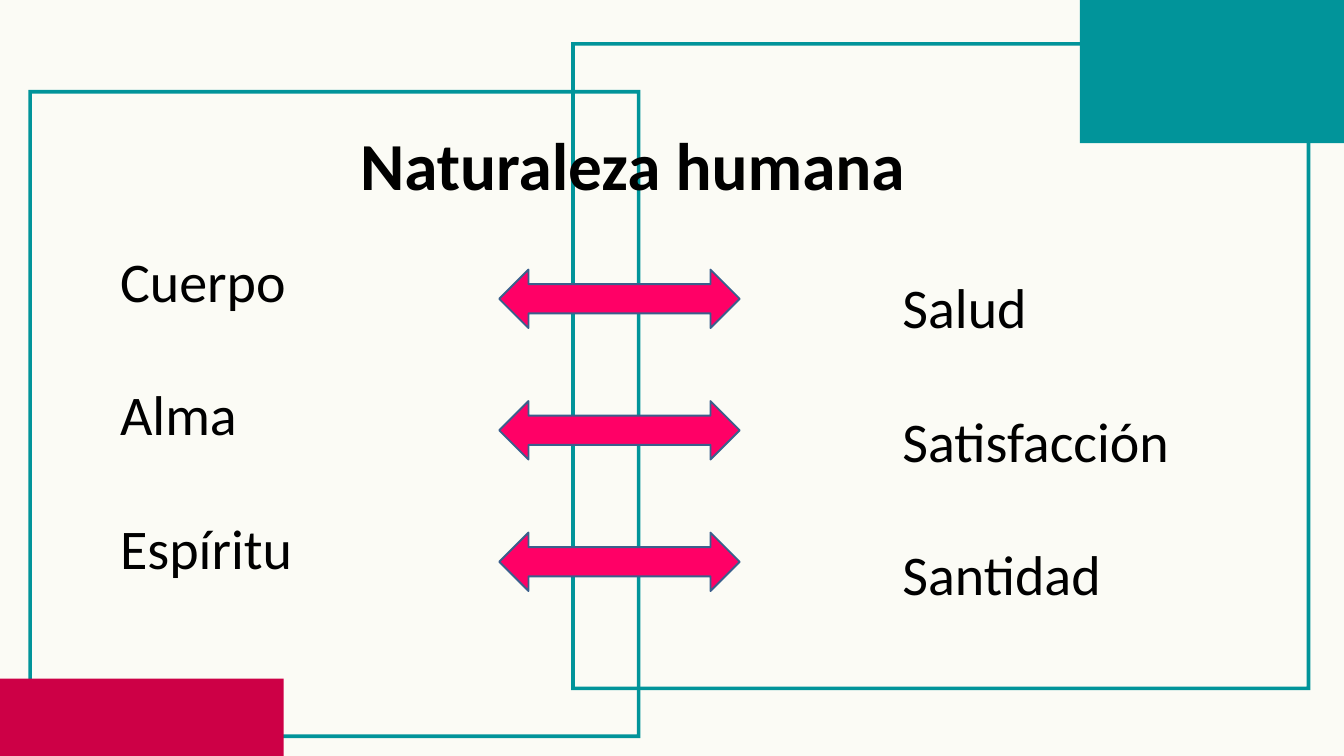
from dataclasses import dataclass

from pptx import Presentation
from pptx.dml.color import RGBColor
from pptx.enum.shapes import MSO_SHAPE as Shape
from pptx.enum.text import MSO_ANCHOR as Anchor, MSO_AUTO_SIZE as AutoSize, PP_ALIGN as Align
from pptx.util import Cm, Pt

COLORS = {
    "background": "FBFBF5",
    "teal": "01949A",
    "crimson": "CD0046",
    "pink": "FF0066",
    "outline": "3A5F8C",
    "text": "000000",
}
FONT = "Calibri"
FRAME_THICKNESS = 0.14
ARROW_TOP, ARROW_STEP = 10.19, 4.97


@dataclass
class Box:
    """A rectangle in centimetres."""
    left: float
    top: float
    width: float
    height: float

    def lengths(self) -> tuple:
        return Cm(self.left), Cm(self.top), Cm(self.width), Cm(self.height)


@dataclass
class WordColumn:
    box: Box
    words: list[str]


FRAMES = [Box(21.59, 1.59, 27.94, 24.5), Box(1.07, 3.4, 23.14, 24.5)]
BLOCKS = [
    (Box(-0.05, 25.65, 10.77, 2.92), "crimson"),
    (Box(40.82, 0, 10.08, 5.41), "teal"),
]
TITLE_BOX = Box(13.36, 4.55, 23.06, 3.33)
COLUMNS = [
    WordColumn(Box(4.29, 9.19, 10.13, 13.84), ["Cuerpo", "Alma", "Espíritu"]),
    WordColumn(Box(33.86, 10.19, 12.27, 13.84), ["Salud", "Satisfacción", "Santidad"]),
]


def rgb(name: str) -> RGBColor:
    return RGBColor.from_string(COLORS[name])


def add_filled(s, kind: Shape, box: Box, color: str):
    sp = s.shapes.add_shape(kind, *box.lengths())
    sp.shadow.inherit = False
    sp.fill.solid()
    sp.fill.fore_color.rgb = rgb(color)
    sp.line.fill.background()
    return sp


def add_frame(s, box: Box) -> None:
    sp = add_filled(s, Shape.FRAME, box, "teal")
    sp.adjustments[0] = FRAME_THICKNESS / min(box.width, box.height)


def add_arrow(s, box: Box) -> None:
    sp = add_filled(s, Shape.LEFT_RIGHT_ARROW, box, "pink")
    sp.line.color.rgb = rgb("outline")
    sp.line.width = Pt(2)


def format_paragraph(p, size: int, bold: bool = False) -> None:
    p.alignment = Align.LEFT
    p.font.name = FONT
    p.font.size = Pt(size)
    p.font.bold = bold
    p.font.color.rgb = rgb("text")


def set_title(s, text: str) -> None:
    """Place the title in front of the shapes drawn so far."""
    sp = s.shapes.title
    sp.left, sp.top, sp.width, sp.height = TITLE_BOX.lengths()
    sp.element.getparent().append(sp.element)
    tf = sp.text_frame
    tf.text = text
    tf.auto_size = AutoSize.NONE
    tf.vertical_anchor = Anchor.TOP
    format_paragraph(tf.paragraphs[0], 72, bold=True)


def add_words(s, column: WordColumn) -> None:
    tf = s.shapes.add_textbox(*column.box.lengths()).text_frame
    tf.word_wrap = True
    for i, word in enumerate(column.words):
        p = tf.add_paragraph() if i else tf.paragraphs[0]
        p.text = word
        p.space_after = Pt(71)
        format_paragraph(p, 60)


def main() -> None:
    prs = Presentation()
    prs.slide_width, prs.slide_height = Cm(50.8), Cm(28.575)
    s = prs.slides.add_slide(prs.slide_layouts.get_by_name("Title Only"))
    s.background.fill.solid()
    s.background.fill.fore_color.rgb = rgb("background")

    for box in FRAMES:
        add_frame(s, box)
    for box, color in BLOCKS:
        add_filled(s, Shape.RECTANGLE, box, color)
    set_title(s, "Naturaleza humana")
    for column in COLUMNS:
        add_words(s, column)
    for row in range(3):
        add_arrow(s, Box(18.87, ARROW_TOP + row * ARROW_STEP, 9.09, 2.21))

    prs.save("out.pptx")


if __name__ == "__main__":
    main()
